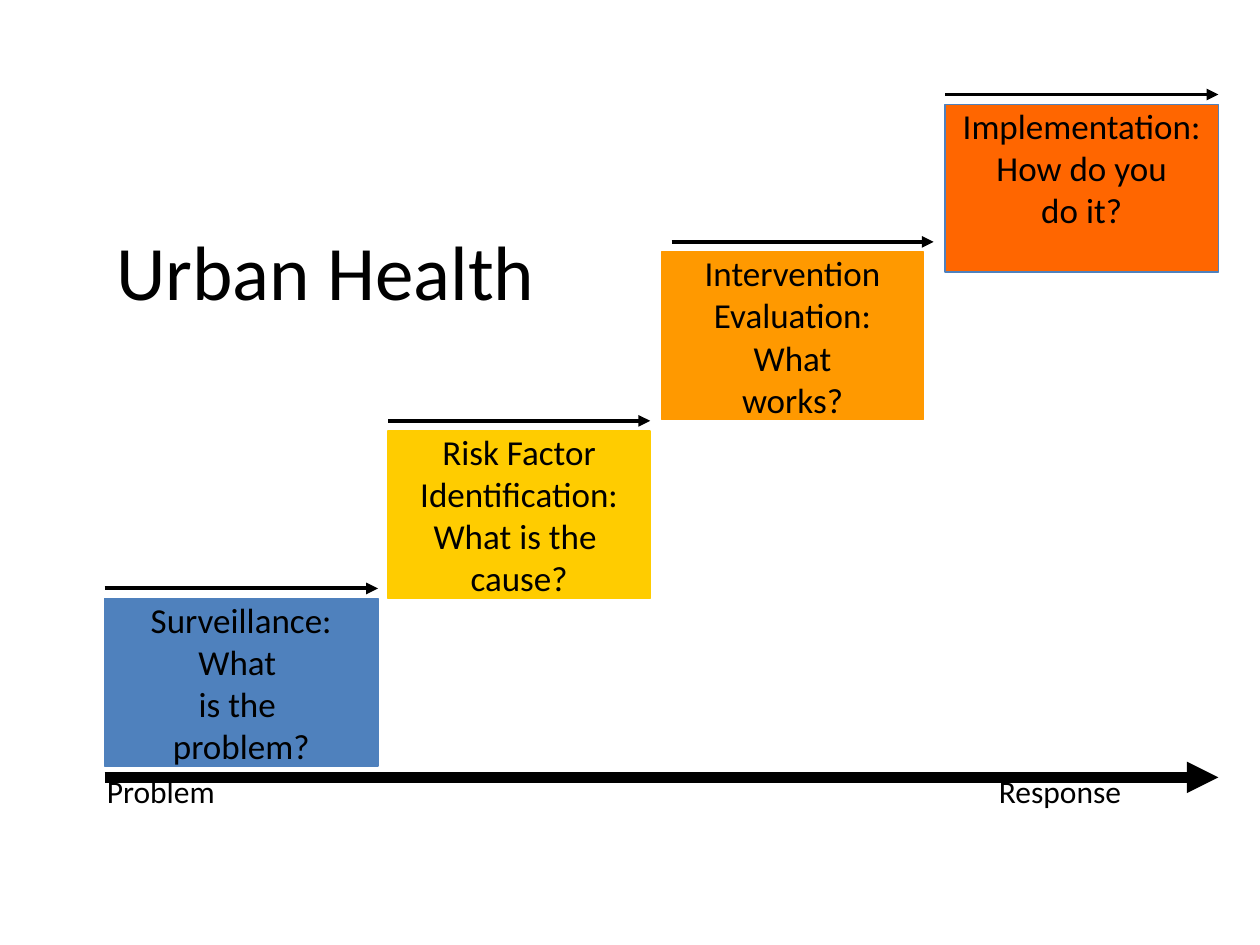
from lxml import etree
from pptx import Presentation
from pptx.dml.color import RGBColor
from pptx.enum.shapes import MSO_CONNECTOR, MSO_SHAPE
from pptx.enum.text import MSO_ANCHOR, PP_ALIGN
from pptx.oxml.ns import qn
from pptx.util import Inches, Pt

STRAIGHT = MSO_CONNECTOR.STRAIGHT
RECTANGLE = MSO_SHAPE.RECTANGLE
TOP, MIDDLE = MSO_ANCHOR.TOP, MSO_ANCHOR.MIDDLE
LEFT, CENTER = PP_ALIGN.LEFT, PP_ALIGN.CENTER


def write(frame, lines, size=20, color="000000", align=CENTER, anchor=TOP, wrap=True):
    frame.word_wrap = wrap
    frame.vertical_anchor = anchor
    for i, line in enumerate(lines):
        paragraph = frame.paragraphs[0] if i == 0 else frame.add_paragraph()
        paragraph.alignment = align
        run = paragraph.add_run()
        run.text = line
        run.font.name = "Calibri"
        run.font.size = Pt(size)
        run.font.color.rgb = RGBColor.from_string(color)


def add_arrow(left, right, y, weight):
    arrow = slide.shapes.add_connector(
        STRAIGHT, Inches(left), Inches(y), Inches(right), Inches(y))
    arrow.line.color.rgb = RGBColor.from_string("000000")
    arrow.line.width = Pt(weight)
    etree.SubElement(arrow.line._get_or_add_ln(), qn("a:tailEnd"), type="triangle")
    etree.SubElement(arrow._element.spPr, qn("a:effectLst"))


prs = Presentation()
prs.slide_width, prs.slide_height = Inches(10), Inches(7.5)
slide = prs.slides.add_slide(prs.slide_layouts[5])

heading = slide.shapes.title
heading.left, heading.top = Inches(0.5), Inches(1.45)
heading.width, heading.height = Inches(4.17), Inches(1.38)
write(heading.text_frame, ["Urban Health"], size=44, anchor=MIDDLE)

add_arrow(0.83, 9.67, 6.17, 6)
for label, left, width in [("Problem", 0.75, 2.17), ("Response", 7.83, 1.75)]:
    axis_label = slide.shapes.add_textbox(
        Inches(left), Inches(6.08), Inches(width), Inches(0.5))
    write(axis_label.text_frame, [label], size=18, align=LEFT)

steps = [
    (0.83, 4.75, 2.17, 0.83, "4F81BD", "4F81BD",
     ["Surveillance:", "What ", "is the ", "problem?"]),
    (3.08, 3.42, 2.08, 3.08, "FFCC00", "FFCC00",
     ["Risk Factor", "Identification:", "What is the ", "cause?"]),
    (5.25, 2, 2.08, 5.33, "FF9900", "FF9900",
     ["Intervention", "Evaluation:", "What", "works?"]),
    (7.5, 0.83, 2.17, 7.5, "FF6600", "4F81BD",
     ["Implementation:", "How do you", "do it?"]),
]
for left, top, width, arrow_left, fill, outline, lines in steps:
    step = slide.shapes.add_shape(
        RECTANGLE, Inches(left), Inches(top), Inches(width), Inches(1.33))
    step.shadow.inherit = False
    step.fill.solid()
    step.fill.fore_color.rgb = RGBColor.from_string(fill)
    step.line.color.rgb = RGBColor.from_string(outline)
    step.line.width = Pt(0.75)
    step.text_frame.margin_top = step.text_frame.margin_bottom = 0
    write(step.text_frame, lines, wrap=False)
    add_arrow(arrow_left, arrow_left + width, top - 0.08, 2.25)

prs.save("out.pptx")
